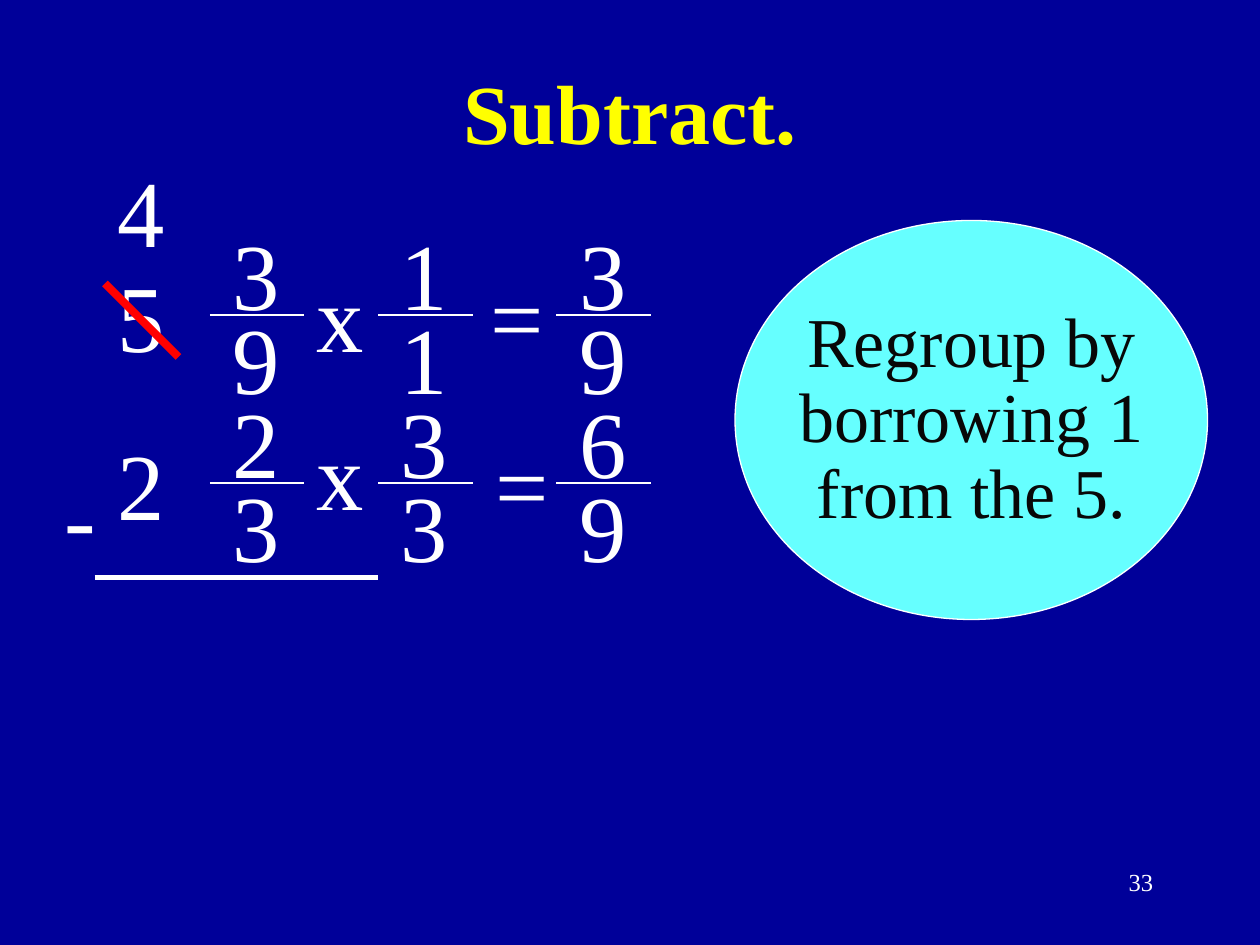
from dataclasses import dataclass

from lxml import etree
from pptx import Presentation
from pptx import util as u
from pptx.dml.color import RGBColor
from pptx.enum import shapes, text
from pptx.oxml.ns import qn

PX = 7620  # EMU per px, 120 px to the inch
FONT = "Times New Roman"
WHITE, YELLOW, RED = "FFFFFF", "FFFF00", "FF0000"
NAVY, CYAN, BLACK = "000099", "66FFFF", "080808"
DIGIT_WIDTH, SIGN_WIDTH = 70, 75
BAR_WIDTH, BAR_DROP, DENOMINATOR_DROP = 90, 100, 80


@dataclass
class Label:
    text: str
    left: int
    top: int
    width: int = DIGIT_WIDTH
    wrap: bool = False


@dataclass
class Fraction:
    numerator: str
    denominator: str
    left: int
    top: int


def px(length: int) -> u.Emu:
    return u.Emu(length * PX)


def color(value: str) -> RGBColor:
    return RGBColor.from_string(value)


def style(paragraph, size: int, value: str, align, spacing=None, bold=False) -> None:
    paragraph.alignment = align
    if spacing:
        paragraph.line_spacing = spacing
    font = paragraph.font
    font.name, font.size, font.bold = FONT, u.Pt(size), bold
    font.color.rgb = color(value)


def add_text(slide, label: Label, height: int = 120, size: int = 54,
             align=text.PP_ALIGN.LEFT) -> None:
    shape = slide.shapes.add_textbox(
        px(label.left), px(label.top), px(label.width), px(height))
    frame = shape.text_frame
    frame.word_wrap = label.wrap
    frame.text = label.text
    style(frame.paragraphs[0], size, WHITE, align)


def add_line(slide, start: tuple[int, int], end: tuple[int, int],
             width: float = 0.75, value: str = WHITE) -> None:
    line = slide.shapes.add_connector(
        shapes.MSO_CONNECTOR.STRAIGHT, *map(px, start + end))
    line.line.width = u.Pt(width)
    line.line.color.rgb = color(value)
    etree.SubElement(line._element.spPr, qn("a:effectLst"))


def add_fraction(slide, fraction: Fraction) -> None:
    left, top = fraction.left, fraction.top
    bar = top + BAR_DROP
    add_text(slide, Label(fraction.numerator, left + 10, top))
    add_line(slide, (left, bar), (left + BAR_WIDTH, bar))
    add_text(slide, Label(fraction.denominator, left + 10, top + DENOMINATOR_DROP))


def add_title(slide, words: str) -> None:
    title = slide.shapes.title
    title.left, title.top, title.width, title.height = map(px, (0, 40, 1200, 150))
    frame = title.text_frame
    frame.text = words
    frame.auto_size = text.MSO_AUTO_SIZE.NONE
    frame.vertical_anchor = text.MSO_ANCHOR.MIDDLE
    style(frame.paragraphs[0], 48, YELLOW, text.PP_ALIGN.CENTER, 0.8, True)


def add_hint(slide, words: str) -> None:
    shape = slide.shapes.add_shape(
        shapes.MSO_SHAPE.OVAL, *map(px, (700, 210, 450, 380)))
    shape.shadow.inherit = False
    shape.fill.solid()
    shape.fill.fore_color.rgb = color(CYAN)
    shape.line.color.rgb = color(WHITE)
    shape.line.width = u.Pt(0.75)
    frame = shape.text_frame
    frame.word_wrap = False
    frame.vertical_anchor = text.MSO_ANCHOR.MIDDLE
    frame.text = words
    for paragraph in frame.paragraphs:
        style(paragraph, 40, BLACK, text.PP_ALIGN.CENTER, 0.9)


COLUMNS = (200, 360, 530)
ROWS = {
    200: (("3", "9"), ("1", "1"), ("3", "9")),
    360: (("2", "3"), ("3", "3"), ("6", "9")),
}
LABELS = [
    Label("5", 100, 240),
    Label("2", 100, 400),
    Label("-", 50, 430, SIGN_WIDTH, True),
    Label("x", 290, 240),
    Label("x", 290, 390),
    Label("=", 455, 240, SIGN_WIDTH),
    Label("=", 460, 400, SIGN_WIDTH),
]


def main() -> None:
    presentation = Presentation()
    presentation.slide_width, presentation.slide_height = px(1200), px(900)
    slide = presentation.slides.add_slide(presentation.slide_layouts[5])
    slide.background.fill.solid()
    slide.background.fill.fore_color.rgb = color(NAVY)

    add_title(slide, "Subtract.")

    # Whole numbers and operators
    for label in LABELS:
        add_text(slide, label)

    # Fractions, row by row
    for top, row in ROWS.items():
        for left, (numerator, denominator) in zip(COLUMNS, row):
            add_fraction(slide, Fraction(numerator, denominator, left, top))

    # Answer rule
    add_line(slide, (90, 550), (360, 550), 3)

    # Regrouping: the 5 is struck out and becomes 4
    add_hint(slide, "Regroup by\nborrowing 1\nfrom the 5.")
    add_line(slide, (100, 270), (170, 340), 4.5, RED)
    add_text(slide, Label("4", 100, 140))

    # Slide number
    add_text(slide, Label("33", 860, 820, 250, True), 60, 14, text.PP_ALIGN.RIGHT)

    presentation.save("out.pptx")


if __name__ == "__main__":
    main()
